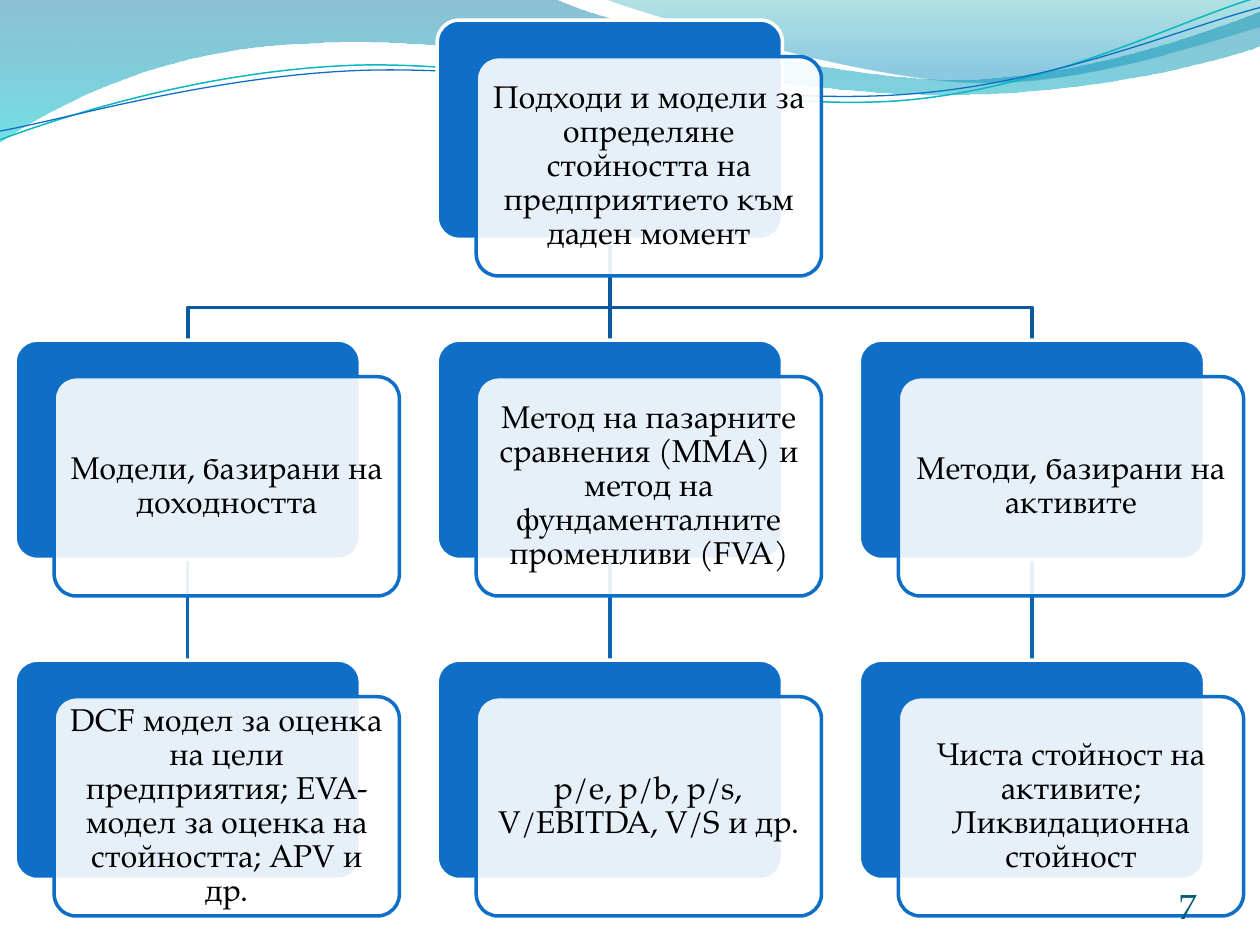
import math

from lxml import etree
from pptx import Presentation
from pptx.dml.color import RGBColor
from pptx.enum.lang import MSO_LANGUAGE_ID
from pptx.enum.shapes import MSO_SHAPE
from pptx.enum.text import MSO_ANCHOR, PP_ALIGN
from pptx.oxml.ns import qn
from pptx.util import Inches, Pt

ROUNDED = MSO_SHAPE.ROUNDED_RECTANGLE
MIDDLE, BOTTOM = MSO_ANCHOR.MIDDLE, MSO_ANCHOR.BOTTOM
CENTER, RIGHT = PP_ALIGN.CENTER, PP_ALIGN.RIGHT
BULGARIAN, ENGLISH = MSO_LANGUAGE_ID.BULGARIAN, MSO_LANGUAGE_ID.ENGLISH_US

FONT = "TeX Gyre Pagella"
BLUE = RGBColor(0x0F, 0x6F, 0xC6)
WHITE = RGBColor(0xFF, 0xFF, 0xFF)
BLACK = RGBColor(0x00, 0x00, 0x00)
TEAL = RGBColor(0x04, 0x5D, 0x75)
BRANCH_BLUE = RGBColor(0x0C, 0x59, 0x9F)
LINK_BLUE = RGBColor(0x0E, 0x65, 0xB4)
WAVE_TEAL = RGBColor(0x0A, 0xB8, 0xBF)

# Each text is a list of runs; runs at odd places are in English.
ROOT = ["Подходи и модели за определяне стойността на предприятието към даден момент"]
BRANCHES = [
    (["Модели, базирани на доходността"],
     ["DCF модел за оценка на цели предприятия; EVA-модел за оценка на стойността; APV и др."]),
    (["Метод на пазарните сравнения (", "MMA", ") и метод на фундаменталните променливи (",
      "FVA", ")"],
     ["p/e, p/b, p/s, V/EBITDA, V/S и др."]),
    (["Методи, базирани на активите"],
     ["Чиста стойност на активите; Ликвидационна стойност"]),
]

# Wave outlines: a point of 2 numbers is a line, one of 6 is a Bezier curve.
# Boxes: left, top, width, height. Gradient stops: position, colour, opacity.
WAVE_BANDS = [
    ((-0.01, -0.01, 10.02, 1.14),
     [(0, 0), (4.4, -0.01), (4.76, 0.17, 6.64, 0.63, 7.58, 0.63),
      (8.53, 0.63, 9.58, 0.26, 10, 0.09), (10.01, 0.36),
      (9.83, 0.44, 8.7, 0.76, 7.46, 0.75), (6.22, 0.75, 3.82, 0.28, 2.57, 0.34),
      (1.29, 0.36, 0.46, 0.83, -0.01, 1.13), (0, 0)],
     [(0, RGBColor(0x00, 0x74, 0xA1), 45), (1, RGBColor(0x00, 0xC6, 0xCF), 55)]),
    ((4.79, -0.01, 5.21, 0.7),
     [(4.79, -0.01), (5.09, 0.11, 6.82, 0.62, 7.69, 0.65),
      (8.56, 0.69, 9.61, 0.32, 10, 0.21), (10, 0), (4.79, -0.01)],
     [(0, RGBColor(0x00, 0xA1, 0xA9), 30), (0.8, RGBColor(0x00, 0x8B, 0xBF), 45)]),
]
WAVE_TILT = -2.7
WAVE_LINES = [
    ((-0.02, 0.22, 10.02, 0.71),
     [(0, 1.11), (0.48, 0.93, 1.58, 0.57, 2.77, 0.52),
      (3.95, 0.47, 5.93, 0.89, 7.13, 0.8), (8.33, 0.71, 9.38, 0.15, 9.98, -0.02)],
     WAVE_TEAL, 0.85),
    ((-0.02, 0.3, 10.03, 0.58),
     [(0, 1.04), (0.47, 0.96, 1.64, 0.61, 2.83, 0.56),
      (4.03, 0.51, 5.97, 0.84, 7.17, 0.75), (8.36, 0.67, 9.41, 0.21, 10, 0.06)],
     BLUE, 0.75),
]

CARD_WIDTH, CARD_HEIGHT = 2.74, 1.74
OFFSET_X, OFFSET_Y = 0.31, 0.29
COLUMNS = [0.12 + 3.35 * index for index in range(3)]
ROWS = [0.16 + 2.54 * index for index in range(3)]
ELBOW_Y = 2.44
LINK_BOX = 0.1


def pairs(segment):
    return list(zip(segment[::2], segment[1::2]))


def untilt(outline, box, degrees):
    """Turn the outline back around the box centre, before the shape is rotated."""
    left, top, width, height = box
    center_x, center_y = left + width / 2, top + height / 2
    cosine, sine = math.cos(math.radians(-degrees)), math.sin(math.radians(-degrees))
    turned = []
    for segment in outline:
        points = []
        for x, y in pairs(segment):
            dx, dy = x - center_x, y - center_y
            points += [center_x + dx * cosine - dy * sine,
                       center_y + dx * sine + dy * cosine]
        turned.append(points)
    return turned


def add_outline(slide, box, outline, close=False):
    """Add a freeform in the given box, with real Bezier curves."""
    left, top, width, height = box
    builder = slide.shapes.build_freeform(Inches(left), Inches(top))
    builder.add_line_segments([(Inches(left + width), Inches(top + height))], close=close)
    shape = builder.convert_to_shape()
    shape.shadow.inherit = False
    geometry = next(shape._element.iter(qn("a:path")))
    for child in list(geometry):
        geometry.remove(child)
    for index, segment in enumerate(outline):
        kind = "moveTo" if index == 0 else "lnTo" if len(segment) == 2 else "cubicBezTo"
        command = etree.SubElement(geometry, qn("a:" + kind))
        for x, y in pairs(segment):
            point = etree.SubElement(command, qn("a:pt"))
            point.set("x", str(Inches(x - left)))
            point.set("y", str(Inches(y - top)))
    if close:
        etree.SubElement(geometry, qn("a:close"))
    return shape


def set_opacity(color_element, percent):
    etree.SubElement(color_element, qn("a:alpha")).set("val", str(percent * 1000))


def set_line(shape, color, width):
    shape.line.color.rgb = color
    shape.line.width = Pt(width)


def add_band(slide, box, outline, stops):
    band = add_outline(slide, box, outline, True)
    band.line.fill.background()
    band.fill.gradient()
    band.fill.gradient_angle = 270
    elements = band._element.iter(qn("a:gs"))
    for stop, element, (position, color, opacity) in zip(
            band.fill.gradient_stops, elements, stops):
        stop.position = position
        stop.color.rgb = color
        set_opacity(element[0], opacity)


def add_open_line(slide, box, outline, color, width):
    shape = add_outline(slide, box, outline)
    shape.fill.background()
    set_line(shape, color, width)
    return shape


def add_link(slide, x, top, bottom, color):
    box = (x - LINK_BOX / 2, top, LINK_BOX, bottom - top)
    add_open_line(slide, box, [(x, top), (x, bottom)], color, 2)


def add_rounded(slide, left, top, fill, line):
    shape = slide.shapes.add_shape(
        ROUNDED, Inches(left), Inches(top), Inches(CARD_WIDTH), Inches(CARD_HEIGHT))
    shape.adjustments[0] = 0.1
    shape.shadow.inherit = False
    shape.fill.solid()
    shape.fill.fore_color.rgb = fill
    set_line(shape, line, 2)
    return shape


def write(shape, texts, size, color, alignment, anchor, inset):
    frame = shape.text_frame
    frame.word_wrap = True
    frame.vertical_anchor = anchor
    frame.margin_left = frame.margin_right = Inches(inset)
    frame.margin_top = frame.margin_bottom = Inches(inset)
    paragraph = frame.paragraphs[0]
    for index, text in enumerate(texts):
        run = paragraph.add_run()
        run.text = text
        run.font.language_id = ENGLISH if index % 2 else BULGARIAN
    paragraph.alignment = alignment
    paragraph.font.name = FONT
    paragraph.font.size = Pt(size)
    paragraph.font.color.rgb = color
    return paragraph


def add_card(slide, left, top, texts):
    """Add a blue back plate and a translucent text card over it."""
    add_rounded(slide, left, top, BLUE, WHITE)
    card = add_rounded(slide, left + OFFSET_X, top + OFFSET_Y, WHITE, BLUE)
    set_opacity(card._element.spPr.find(qn("a:solidFill"))[0], 90)
    write(card, texts, 18, BLACK, CENTER, MIDDLE, 0.07).line_spacing = 0.9


def main():
    presentation = Presentation()
    presentation.slide_width, presentation.slide_height = Inches(10), Inches(7.5)
    slide = presentation.slides.add_slide(presentation.slide_layouts[6])

    for box, outline, stops in WAVE_BANDS:
        add_band(slide, box, outline, stops)
    for box, outline, color, width in WAVE_LINES:
        wave = add_open_line(slide, box, untilt(outline, box, WAVE_TILT), color, width)
        wave.rotation = WAVE_TILT

    # Links come first so that the cards cover them.
    centers = [left + CARD_WIDTH / 2 for left in COLUMNS]
    bottoms = [top + CARD_HEIGHT for top in ROWS]
    middle = centers[1]
    for x in centers:
        add_link(slide, x, bottoms[1], ROWS[2], LINK_BLUE)
        if x == middle:
            add_link(slide, x, bottoms[0], ROWS[1], BRANCH_BLUE)
        else:
            box = (min(x, middle), bottoms[0], abs(x - middle), ROWS[1] - bottoms[0])
            add_open_line(slide, box, [(middle, bottoms[0]), (middle, ELBOW_Y),
                                       (x, ELBOW_Y), (x, ROWS[1])], BRANCH_BLUE, 2)

    add_card(slide, COLUMNS[1], ROWS[0], ROOT)
    for left, (approach, models) in zip(COLUMNS, BRANCHES):
        add_card(slide, left, ROWS[1], approach)
        add_card(slide, left, ROWS[2], models)

    number = slide.shapes.add_textbox(Inches(8.67), Inches(6.95), Inches(0.83), Inches(0.4))
    write(number, ["7"], 20, TEAL, RIGHT, BOTTOM, 0)
    presentation.save("out.pptx")


if __name__ == "__main__":
    main()
